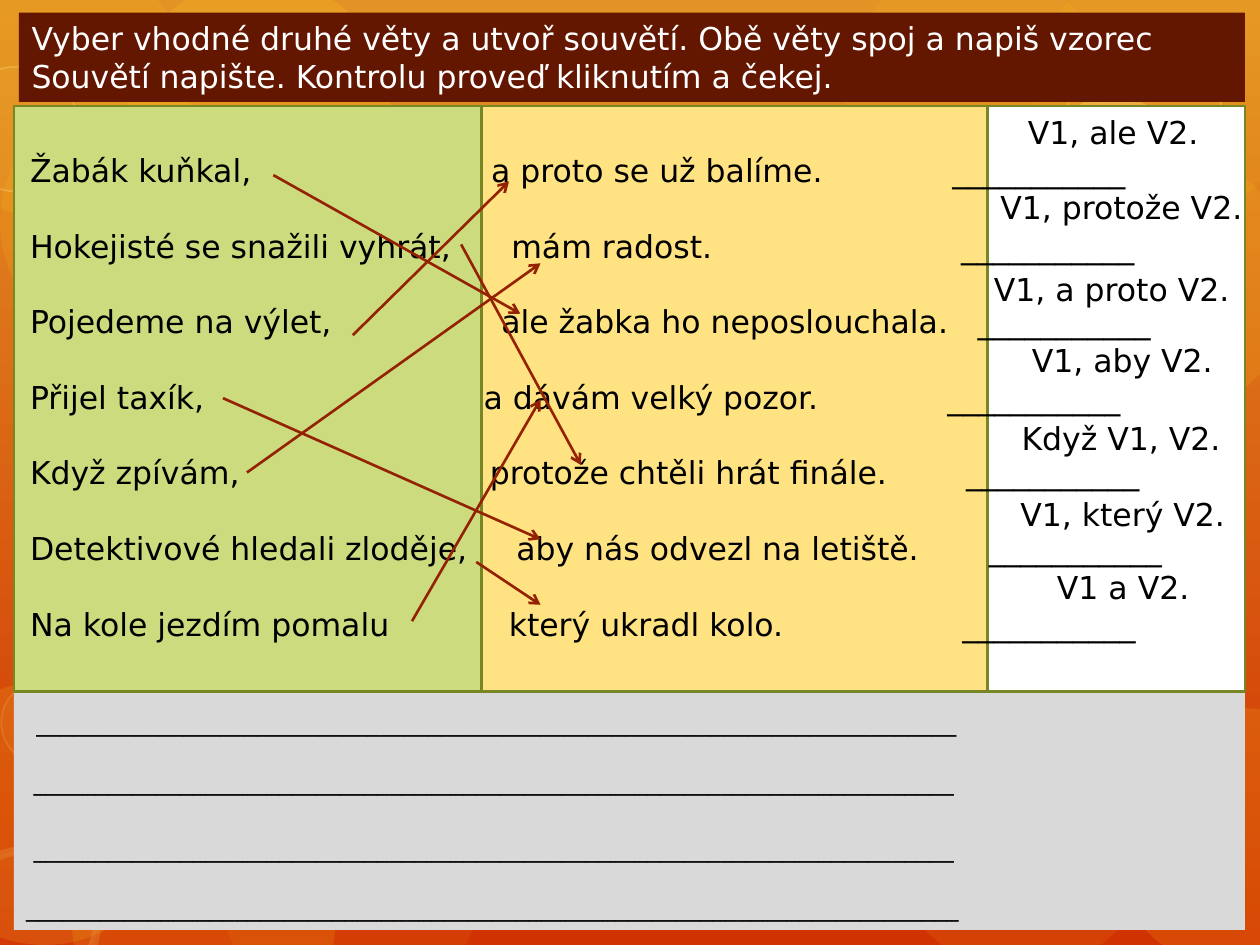
from lxml import etree
from pptx import Presentation
from pptx import util as u
from pptx.dml.color import RGBColor
from pptx.enum import shapes, text
from pptx.oxml import ns

FONT = "DejaVu Sans"
BLACK = "000000"


def tint(color, code, alpha=100):
    color.rgb = RGBColor.from_string(code)
    if alpha < 100:
        for node in color._xFill:
            etree.SubElement(node, ns.qn("a:alpha"), val=str(alpha * 1000))


def style(frame, size, code):
    for para in frame.paragraphs:
        para.alignment = text.PP_ALIGN.LEFT
        for run in para.runs:
            run.font.name = FONT
            run.font.size = u.Pt(size)
            tint(run.font.color, code)


deck = Presentation()
deck.slide_width, deck.slide_height = u.Inches(10), u.Inches(7.5)
slide = deck.slides.add_slide(deck.slide_layouts[5])
items = slide.shapes

back = slide.background.fill
back.gradient()
back.gradient_angle = 270
for stop, code in zip(back.gradient_stops, ("E39325", "D13202")):
    tint(stop.color, code)

discs = [
    (-0.55, -0.32, 2.09, 14, 0, 0), (1.01, -0.18, 2.09, 20, 0, 0),
    (0, 0.72, 2.09, 15, 0, 0), (6.69, -0.3, 2.09, 10, 0, 0),
    (8.2, -0.32, 2.09, 10, 0, 0), (8.2, 1.2, 2.09, 15, 0, 0),
    (-0.69, 5.41, 2.09, 16, 0, 0), (0.57, 6.27, 2.09, 16, 0, 0),
    (1.73, 5.96, 2.09, 8, 0, 0), (7.06, 5.62, 2.09, 10, 0, 0),
    (8.81, 5.62, 2.09, 16, 0, 0),
    (-0.36, 0.53, 0.99, 5, 1, 30), (8.47, 0.31, 1.23, 5, 1, 30),
    (8.3, 0.8, 1.06, 5, 5, 30), (0.01, 5.4, 0.67, 5, 1, 15),
    (-0.36, 6.75, 1.13, 5, 5, 15),
]
for x, y, size, alpha, width, glow in discs:
    disc = items.add_shape(shapes.MSO_SHAPE.OVAL, u.Inches(x), u.Inches(y),
                           u.Inches(size), u.Inches(size))
    disc.shadow.inherit = False
    disc.fill.solid()
    tint(disc.fill.fore_color, "FFE281" if width else "FDC61B", alpha)
    if width:
        disc.line.width = u.Pt(width)
        tint(disc.line.color, "FFE281", glow)
    else:
        disc.line.fill.background()

title = items.title
disc.element.addnext(title.element)
title.left, title.top = u.Inches(0.15), u.Inches(0.1)
title.width, title.height = u.Inches(9.73), u.Inches(0.71)
title.fill.solid()
tint(title.fill.fore_color, "631701")
frame = title.text_frame
frame.text = ("Vyber vhodné druhé věty a utvoř souvětí. Obě věty spoj a napiš vzorec\n"
              "Souvětí napište. Kontrolu proveď kliknutím a čekej.")
frame.auto_size = text.MSO_AUTO_SIZE.NONE
frame.vertical_anchor = text.MSO_ANCHOR.MIDDLE
style(frame, 18, "FFFFFF")

panels = [
    (0.11, 0.84, 3.71, 4.65, "CCDB7D"), (3.82, 0.84, 4.02, 4.65, "FFE281"),
    (7.84, 0.84, 2.04, 4.65, "FFFFFF"), (0.11, 5.5, 9.77, 1.88, "D9D9D9"),
]
for x, y, w, h, code in panels:
    panel = items.add_shape(shapes.MSO_SHAPE.RECTANGLE, u.Inches(x), u.Inches(y),
                            u.Inches(w), u.Inches(h))
    panel.shadow.inherit = False
    panel.fill.solid()
    tint(panel.fill.fore_color, code)
    if code == "D9D9D9":
        panel.line.fill.background()
    else:
        panel.line.width = u.Pt(1.5)
        tint(panel.line.color, "778726")

frame = panel.text_frame
frame.margin_top = u.Inches(0.09)
frame.vertical_anchor = text.MSO_ANCHOR.MIDDLE
frame.text = "\n".join("_" * count for count in (75, 75, 75, 76))
style(frame, 14, BLACK)
for para, indent, gap in zip(frame.paragraphs, (0.08, 0.06, 0.06, 0), (17, 21.6, 16.8, 0)):
    para.space_after = u.Pt(gap)
    para._p.get_or_add_pPr().set("marL", str(u.Inches(indent)))

rows = [
    ("Žabák kuňkal,", "a proto se už balíme.", 3.9, 7.56),
    ("Hokejisté se snažili vyhrát,", "mám radost.", 4.06, 7.63),
    ("Pojedeme na výlet,", "ale žabka ho neposlouchala.", 3.98, 7.76),
    ("Přijel taxík,", "a dávám velký pozor.", 3.84, 7.52),
    ("Když zpívám,", "protože chtěli hrát finále.", 3.89, 7.67),
    ("Detektivové hledali zloděje,", "aby nás odvezl na letiště.", 4.1, 7.85),
    ("Na kole jezdím pomalu", "který ukradl kolo.", 4.04, 7.64),
]
box = items.add_textbox(u.Inches(0.14), u.Inches(1.15), u.Inches(9.83), u.Inches(4.04))
frame = box.text_frame
frame.word_wrap = True
frame.text = "\n".join(f"{first}\t{second}\t{'_' * 11}" for first, second, *stops in rows)
style(frame, 18, BLACK)
for para, (first, second, *stops) in zip(frame.paragraphs, rows):
    para.space_after = u.Pt(21.6)
    tabs = etree.SubElement(para._p.get_or_add_pPr(), ns.qn("a:tabLst"))
    for stop in stops:
        etree.SubElement(tabs, ns.qn("a:tab"), pos=str(u.Inches(stop - 0.24)), algn="l")

arrows = [
    (2.17, 1.39, 4.13, 2.49), (3.66, 1.94, 4.61, 3.69), (2.8, 2.66, 4.04, 1.44),
    (1.77, 3.16, 4.29, 4.28), (1.96, 3.75, 4.29, 2.09), (3.78, 4.46, 4.29, 4.8),
    (3.27, 4.93, 4.29, 3.17),
]
for ends in arrows:
    arrow = items.add_connector(shapes.MSO_CONNECTOR.STRAIGHT, *map(u.Inches, ends))
    arrow.line.width = u.Pt(1.5)
    tint(arrow.line.color, "942202")
    etree.SubElement(arrow.line._get_or_add_ln(), ns.qn("a:tailEnd"), type="arrow")
    etree.SubElement(arrow.element.spPr, ns.qn("a:effectLst"))

answers = [
    ("V1, ale V2.", 8.06, 0.85, 1.6), ("V1, protože V2.", 7.84, 1.44, 2.18),
    ("V1, a proto V2.", 7.79, 2.09, 2.14), ("V1, aby V2.", 8.09, 2.66, 1.69),
    ("Když V1, V2.", 8.01, 3.28, 1.84), ("V1, který V2.", 8, 3.88, 1.88),
    ("V1 a V2.", 8.29, 4.46, 1.29),
]
for words, x, y, w in answers:
    box = items.add_textbox(u.Inches(x), u.Inches(y), u.Inches(w), u.Inches(0.4))
    box.text_frame.word_wrap = False
    box.text_frame.text = words
    style(box.text_frame, 18, BLACK)

deck.save("out.pptx")
